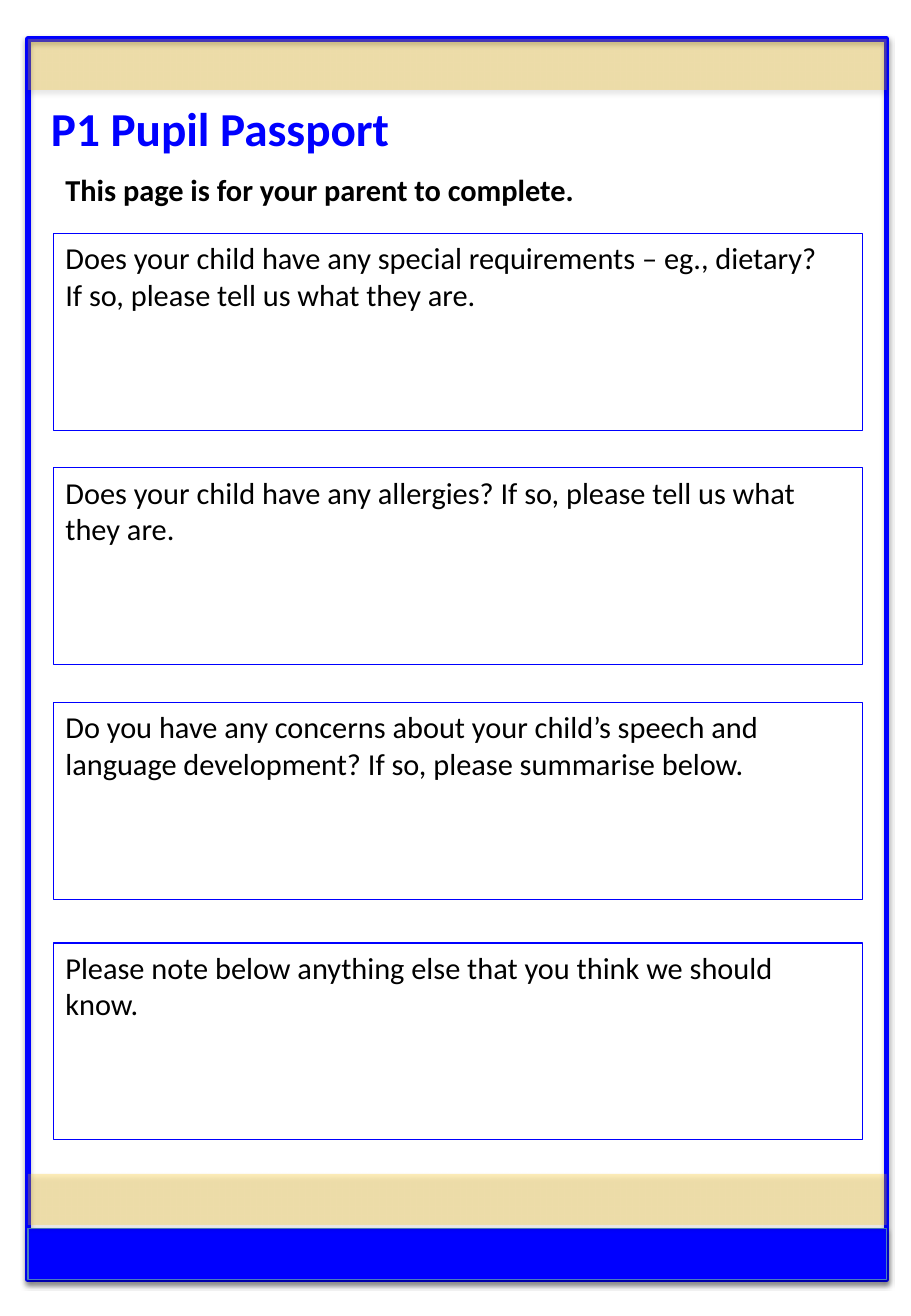
"""Build the parents' page of the P1 pupil passport."""
import dataclasses

import lxml.etree
import pptx
import pptx.dml.color
import pptx.enum.shapes
import pptx.enum.text
import pptx.oxml.ns
import pptx.util

Inches = pptx.util.Inches
qn = pptx.oxml.ns.qn


@dataclasses.dataclass(frozen=True)
class Theme:
    font: str = "Calibri"
    blue: str = "0000FF"
    gold: str = "FEC309"
    black: str = "000000"
    edge: str = "4B7EBC"
    title_edge: str = "054697"
    gold_alpha: int = 28
    shadow_alpha: int = 35
    title_size: int = 28
    body_size: int = 18
    frame_line: float = 3.25
    thin_line: float = 0.75


def rgb(value):
    return pptx.dml.color.RGBColor.from_string(value)


def set_alpha(color, percent):
    lxml.etree.SubElement(color, qn("a:alpha"), val=str(percent * 1000))


def add_color(parent, value):
    return lxml.etree.SubElement(parent, qn("a:srgbClr"), val=value)


class PassportPage:
    def __init__(self, deck, theme):
        self.theme = theme
        self.page = deck.slides.add_slide(deck.slide_layouts[6])

    def rectangle(self, left, top, width, height, fill=None, alpha=None, line=None,
                  weight=None, shadow=False):
        box = self.page.shapes.add_shape(
            pptx.enum.shapes.MSO_SHAPE.RECTANGLE,
            Inches(left), Inches(top), Inches(width), Inches(height))
        box.shadow.inherit = False
        if fill:
            box.fill.solid()
            box.fill.fore_color.rgb = rgb(fill)
            if alpha:
                set_alpha(box._element.spPr.find(".//" + qn("a:srgbClr")), alpha)
        else:
            box.fill.background()
        if line:
            box.line.color.rgb = rgb(line)
            box.line.width = pptx.util.Pt(weight)
        else:
            box.line.fill.background()
        if shadow:
            self.cast_shadow(box)
        return box

    def cast_shadow(self, box):
        effects = box._element.spPr.find(qn("a:effectLst"))
        shade = lxml.etree.SubElement(
            effects, qn("a:outerShdw"), blurRad=str(pptx.util.Pt(3.1)),
            dist=str(pptx.util.Pt(1.8)), dir="5400000", rotWithShape="0")
        set_alpha(add_color(shade, self.theme.black), self.theme.shadow_alpha)

    def set_text(self, box, lines, size, color, bold=False, indent=0.1):
        frame = box.text_frame
        settings = {
            "word_wrap": True,
            "auto_size": pptx.enum.text.MSO_AUTO_SIZE.NONE,
            "vertical_anchor": pptx.enum.text.MSO_ANCHOR.TOP,
            "margin_left": Inches(indent),
        }
        for name, value in settings.items():
            setattr(frame, name, value)
        look = {"name": self.theme.font, "size": pptx.util.Pt(size), "bold": bold}
        for index, line in enumerate(lines):
            para = frame.add_paragraph() if index else frame.paragraphs[0]
            para.alignment = pptx.enum.text.PP_ALIGN.LEFT
            span = para.add_run()
            span.text = line
            for name, value in look.items():
                setattr(span.font, name, value)
            span.font.color.rgb = rgb(color)

    def label(self, left, top, width, height, text, size, color, indent=0.1):
        box = self.page.shapes.add_textbox(
            Inches(left), Inches(top), Inches(width), Inches(height))
        self.set_text(box, [text], size, color, True, indent)
        return box

    def title(self, left, top, width, height, text):
        theme = self.theme
        box = self.label(left, top, width, height, text, theme.title_size, theme.blue, 0.19)
        properties = box._element.find(".//" + qn("a:rPr"))
        outline = lxml.etree.Element(qn("a:ln"), w=str(pptx.util.Pt(1)))
        add_color(lxml.etree.SubElement(outline, qn("a:solidFill")), theme.title_edge)
        properties.insert(0, outline)

    def question(self, top, lines):
        theme = self.theme
        box = self.rectangle(0.44, top, 6.66, 1.62, line=theme.blue, weight=theme.thin_line)
        self.set_text(box, lines, theme.body_size, theme.black)


def main():
    theme = Theme()
    deck = pptx.Presentation()
    deck.slide_width, deck.slide_height = Inches(7.5), Inches(10.83)
    passport = PassportPage(deck, theme)
    left, top, width, band = 0.23, 0.32, 7.07, 0.42

    passport.rectangle(left, top, width, 10.21, line=theme.blue,
                       weight=theme.frame_line, shadow=True)
    gold = {"fill": theme.gold, "alpha": theme.gold_alpha}
    footer = {"fill": theme.blue, "line": theme.edge, "weight": theme.thin_line}
    for band_top, look in ((top, gold), (10.11, footer), (9.66, gold)):
        passport.rectangle(left, band_top, width, band, shadow=True, **look)

    passport.title(left, 0.77, width, 0.57, "P1 Pupil Passport")
    passport.label(0.44, 1.36, 6.86, 0.4, "This page is for your parent to complete.",
                   theme.body_size, theme.black)

    questions = {
        1.92: ["Does your child have any special requirements – eg., dietary?",
               "If so, please tell us what they are."],
        3.85: ["Does your child have any allergies? If so, please tell us what they are."],
        5.78: ["Do you have any concerns about your child’s speech and language "
               "development? If so, please summarise below."],
        7.76: ["Please note below anything else that you think we should know."],
    }
    for question_top, lines in questions.items():
        passport.question(question_top, lines)
    deck.save("out.pptx")


if __name__ == "__main__":
    main()
